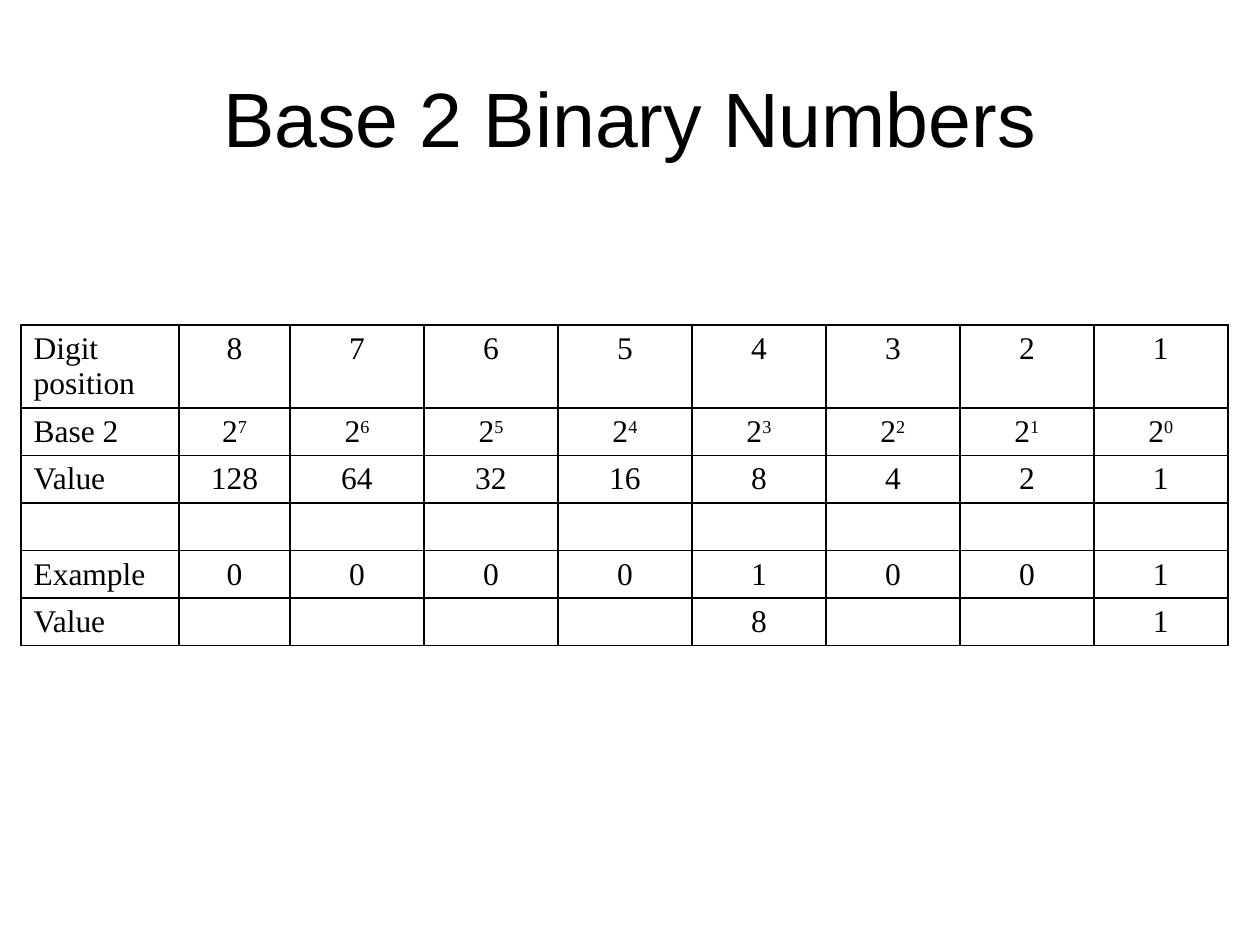
from dataclasses import dataclass

from lxml import etree
from pptx import Presentation
from pptx.dml.color import RGBColor
from pptx.enum.text import MSO_ANCHOR, PP_ALIGN
from pptx.oxml.ns import qn
from pptx.util import Emu, Pt

CENTER, LEFT = PP_ALIGN.CENTER, PP_ALIGN.LEFT
MIDDLE = MSO_ANCHOR.MIDDLE
EMU_PER_PX = 914400 / 126
BLACK = "000000"
TITLE_FONT, TABLE_FONT = "Arial", "Times New Roman"
TABLE_SIZE = 18
BORDER_WIDTH = 1
TITLE_ONLY_LAYOUT = 5

TABLE_LEFT, TABLE_TOP = 21, 325
COLUMN_WIDTHS = [158, 111] + [134] * 7
ROW_HEIGHTS = [83] + [47] * 5


@dataclass
class TableRow:
    label: str
    values: list[str]
    exponents: list[str] | None = None


def px(length: int) -> Emu:
    return Emu(round(length * EMU_PER_PX))


def color(hex_value: str) -> RGBColor:
    return RGBColor.from_string(hex_value)


def add_run(paragraph, text: str, font_name: str, size: int):
    run = paragraph.add_run()
    run.text = text
    run.font.name = font_name
    run.font.size = Pt(size)
    run.font.color.rgb = color(BLACK)
    return run


def draw_borders(cell) -> None:
    properties = cell._tc.get_or_add_tcPr()
    for side in ("a:lnL", "a:lnR", "a:lnT", "a:lnB"):
        line = etree.SubElement(properties, qn(side), w=str(Pt(BORDER_WIDTH)))
        fill = etree.SubElement(line, qn("a:solidFill"))
        etree.SubElement(fill, qn("a:srgbClr"), val=BLACK)


def fill_cell(cell, text: str, exponent: str, alignment) -> None:
    draw_borders(cell)
    cell.fill.background()
    paragraph = cell.text_frame.paragraphs[0]
    paragraph.alignment = alignment
    if text:
        add_run(paragraph, text, TABLE_FONT, TABLE_SIZE)
    else:
        # Empty cells keep the table's line height
        end = etree.SubElement(paragraph._p, qn("a:endParaRPr"), sz=str(TABLE_SIZE * 100))
        etree.SubElement(end, qn("a:latin"), typeface=TABLE_FONT)
    if exponent:
        run = add_run(paragraph, exponent, TABLE_FONT, TABLE_SIZE)
        run.font._element.set("baseline", "30000")


def draw_title(slide, text: str) -> None:
    title = slide.shapes.title
    title.left, title.top, title.width, title.height = px(63), px(38), px(1134), px(158)
    title.text_frame.vertical_anchor = MIDDLE
    paragraph = title.text_frame.paragraphs[0]
    paragraph.alignment = CENTER
    add_run(paragraph, text, TITLE_FONT, 44)


def draw_table(slide, rows: list[TableRow]) -> None:
    frame = slide.shapes.add_table(
        len(rows), len(COLUMN_WIDTHS), px(TABLE_LEFT), px(TABLE_TOP),
        px(sum(COLUMN_WIDTHS)), px(sum(ROW_HEIGHTS)))
    table = frame.table
    table.first_row = table.horz_banding = False
    for column, width in zip(table.columns, COLUMN_WIDTHS):
        column.width = px(width)
    for row_index, (row, height) in enumerate(zip(rows, ROW_HEIGHTS)):
        table.rows[row_index].height = px(height)
        fill_cell(table.cell(row_index, 0), row.label, "", LEFT)
        exponents = row.exponents or [""] * len(row.values)
        for column_index, (value, exponent) in enumerate(zip(row.values, exponents), 1):
            fill_cell(table.cell(row_index, column_index), value, exponent, CENTER)


def main() -> None:
    presentation = Presentation()
    presentation.slide_width, presentation.slide_height = px(1260), px(945)
    slide = presentation.slides.add_slide(presentation.slide_layouts[TITLE_ONLY_LAYOUT])

    # Table contents follow from the powers of two and the example number
    powers = range(7, -1, -1)
    place_values = [str(2 ** power) for power in powers]
    example = list("00001001")
    rows = [
        TableRow("Digit position", [str(power + 1) for power in powers]),
        TableRow("Base 2", ["2"] * 8, [str(power) for power in powers]),
        TableRow("Value", place_values),
        TableRow("", [""] * 8),
        TableRow("Example", example),
        TableRow("Value", [value if bit == "1" else ""
                           for bit, value in zip(example, place_values)]),
    ]

    draw_title(slide, "Base 2 Binary Numbers")
    draw_table(slide, rows)
    presentation.save("out.pptx")


if __name__ == "__main__":
    main()
